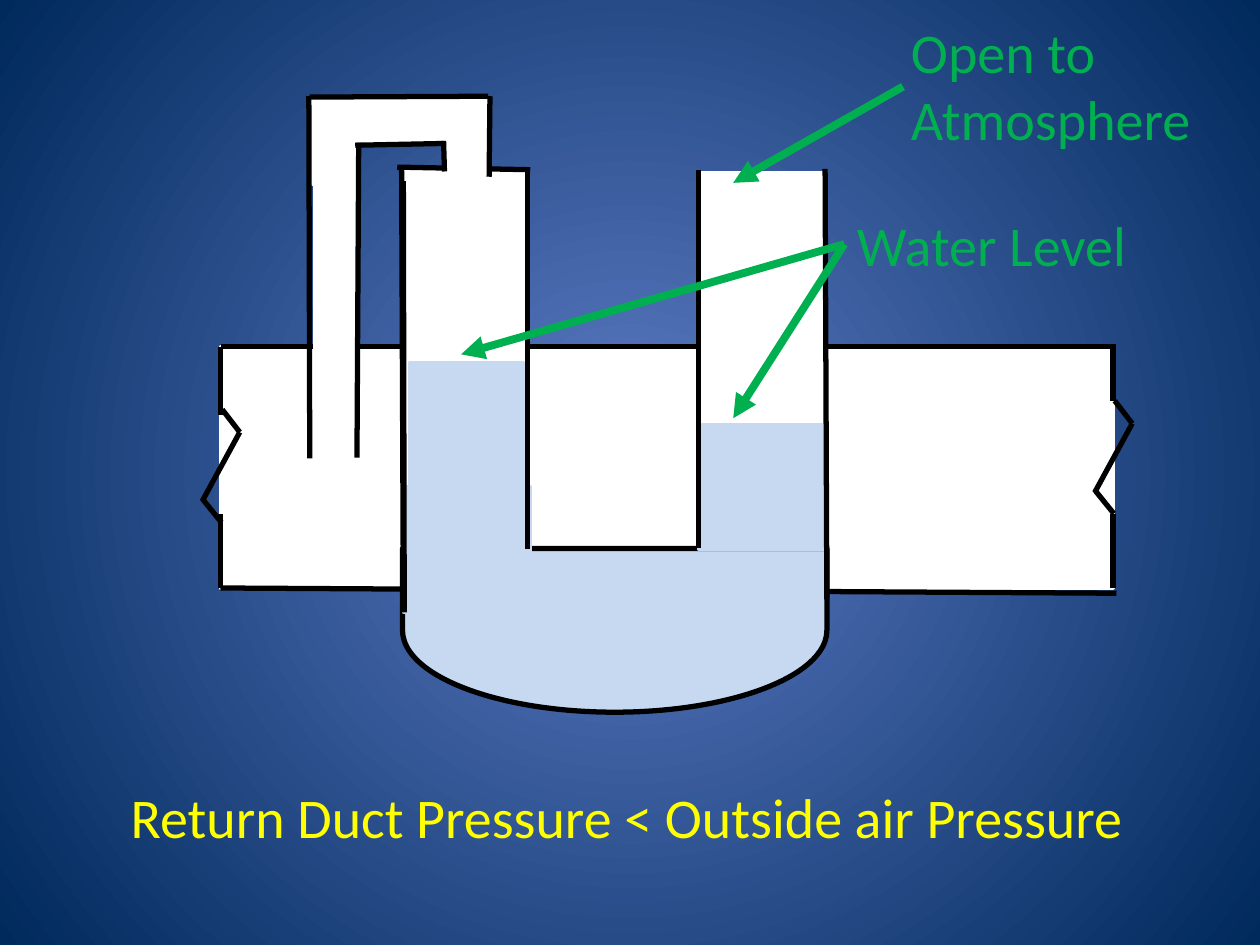
from lxml import etree
from pptx import Presentation
from pptx import util as u
from pptx.dml.color import RGBColor
from pptx.enum import shapes, text
from pptx.oxml import ns

COLORS = {"center": "5E7CC5", "edge": "00295C", "white": "FFFFFF", "black": "000000",
          "water": "C6D9F1", "label": "00B050", "caption": "FFFF00"}
RECT = shapes.MSO_SHAPE.RECTANGLE
CORNER = shapes.MSO_SHAPE.CORNER

deck = Presentation()
deck.slide_width, deck.slide_height = u.Pt(720), u.Pt(540)
slide = deck.slides.add_slide(deck.slide_layouts[6])


def add_part(kind, left, top, width, height, fill, line=None, weight=2, rotation=0):
    part = slide.shapes.add_shape(kind, u.Pt(left), u.Pt(top), u.Pt(width), u.Pt(height))
    part.shadow.inherit = False
    part.rotation = rotation
    part.fill.solid()
    part.fill.fore_color.rgb = RGBColor.from_string(COLORS[fill])
    part.line.color.rgb = RGBColor.from_string(COLORS[line or fill])
    part.line.width = u.Pt(weight)


def add_line(x1, y1, x2, y2, color="black", weight=3):
    line = slide.shapes.add_connector(
        shapes.MSO_CONNECTOR.STRAIGHT, u.Pt(x1), u.Pt(y1), u.Pt(x2), u.Pt(y2))
    line.line.color.rgb = RGBColor.from_string(COLORS[color])
    line.line.width = u.Pt(weight)
    etree.SubElement(line._element.spPr, ns.qn("a:effectLst"))
    return line


# Background: circular gradient from the centre
fill = slide.background.fill
fill.gradient()
for stop, position, name in zip(fill.gradient_stops, (0, 1), ("center", "edge")):
    stop.position = position
    stop.color.rgb = RGBColor.from_string(COLORS[name])
gradient = slide._element.find(".//" + ns.qn("a:gradFill"))
linear = gradient.find(ns.qn("a:lin"))
circle = etree.Element(ns.qn("a:path"), {"path": "circle"})
etree.SubElement(circle, ns.qn("a:fillToRect"), dict.fromkeys("ltrb", "50000"))
gradient.replace(linear, circle)

# Duct with a broken edge at each end
add_part(RECT, 126, 198, 510, 138, "white")
for x, dy, upper_end in ((126, 0, 237), (636, -5, 229)):
    add_line(x, 198, x, upper_end)
    add_line(x, 294, x, 336)
    add_line(x - 10.5, 286.5 + dy, x + 11, 247 + dy)
    add_line(x + 1, 234 + dy, x + 11, 247 + dy)
    add_line(x - 10, 285.5 + dy, x + 0.5, 298.5 + dy)
add_line(126, 336, 638, 339)
add_line(126, 198, 638, 198)

# U-tube: curved bottom, water, then the air above it
add_part(shapes.MSO_SHAPE.FLOWCHART_DELAY, 304.5, 239, 93.5, 242.5, "water", "black", 3, 90)
for left, top, name in ((231, 278, "water"), (399.5, 242, "water"),
                        (229.5, 168.5, "white"), (399.5, 168.5, "white"),
                        (229.5, 97, "white"), (399.5, 98.5, "white")):
    add_part(RECT, left, top, 72, 72, name)
add_part(RECT, 234, 207.5, 65, 72, "water")
for wall in ((229.5, 96.5, 230.5, 342.5), (230.5, 103.5, 231, 350),
             (471.5, 96.5, 472.5, 342.5), (301.5, 98.5, 301.5, 314),
             (399, 97, 399, 313), (227, 95.5, 303, 97)):
    add_line(*wall)

# Pipe from the duct to the left leg
add_part(CORNER, 229.5, 56, 49, 50.5, "white", rotation=180)
add_part(CORNER, 179.5, 55.5, 49, 50.5, "white", rotation=90)
add_part(RECT, 180, 105, 24.5, 117.5, "white")
for wall in ((176.5, 55, 177, 262), (205, 81.5, 204, 261.5),
             (177, 55.5, 279, 55), (203, 83, 254, 82),
             (280, 55, 279.5, 101), (253.5, 80.5, 254, 98)):
    add_line(*wall)

# Labels and caption
boxes = {}
for wording, left, top, width, height, name, align, wrap in (
        ("Water Level", 482.5, 116.5, 170, 46, "label", text.PP_ALIGN.LEFT, False),
        ("Return Duct Pressure ˂ Outside air Pressure ", 65, 443.5, 594, 46,
         "caption", text.PP_ALIGN.CENTER, False),
        ("Open to Atmosphere", 513.5, 6.5, 210, 85, "label", text.PP_ALIGN.LEFT, True)):
    box = slide.shapes.add_textbox(u.Pt(left), u.Pt(top), u.Pt(width), u.Pt(height))
    box.text_frame.word_wrap = wrap
    box.text_frame.auto_size = text.MSO_AUTO_SIZE.SHAPE_TO_FIT_TEXT
    para = box.text_frame.paragraphs[0]
    para.alignment = align
    span = para.add_run()
    span.text = wording
    span.font.name, span.font.size = "Calibri", u.Pt(32)
    span.font.color.rgb = RGBColor.from_string(COLORS[name])
    boxes[wording] = box

# Arrows from the labels to the tube
for wording, x1, y1, x2, y2 in (("Open to Atmosphere", 516, 49.5, 419, 104.5),
                                ("Water Level", 482.5, 139.5, 419, 239),
                                ("Water Level", 482.5, 139.5, 263.5, 202.5)):
    arrow = add_line(x1, y1, x2, y2, "label", 4.5)
    if wording == "Water Level":
        arrow.begin_connect(boxes[wording], 1)
    etree.SubElement(arrow.line._get_or_add_ln(), ns.qn("a:tailEnd"), {"type": "triangle"})

deck.save("out.pptx")
